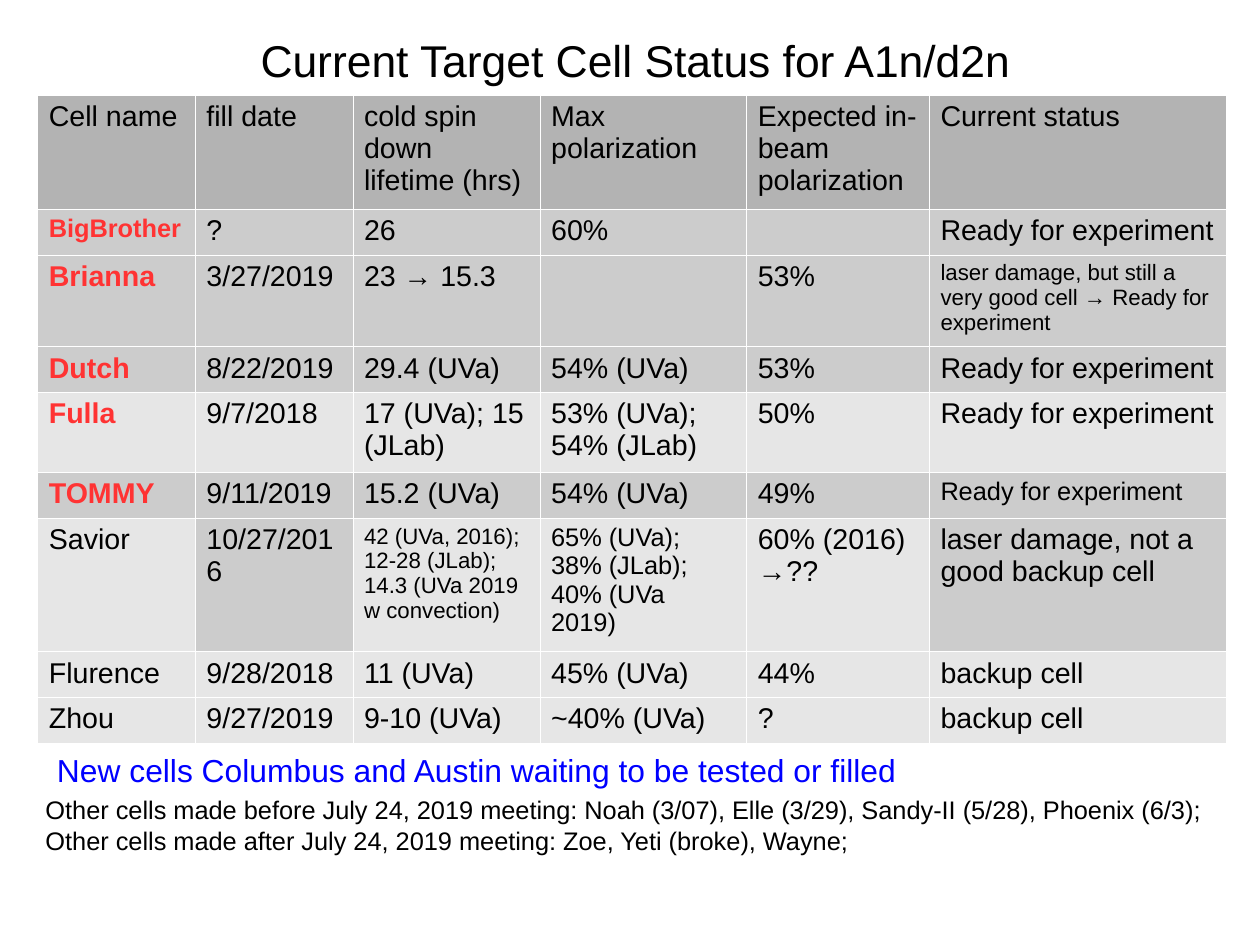
from typing import NamedTuple

from lxml import etree
from pptx import Presentation
from pptx.dml.color import RGBColor
from pptx.enum.text import MSO_ANCHOR, PP_ALIGN
from pptx.oxml.ns import qn
from pptx.util import Cm, Emu, Pt

LEFT, CENTER = PP_ALIGN.LEFT, PP_ALIGN.CENTER
TOP, MIDDLE = MSO_ANCHOR.TOP, MSO_ANCHOR.MIDDLE
WIDTH, HEIGHT = Cm(28), Cm(21)
FONT = "Arial"
BLACK, RED, BLUE, WHITE = "000000", "FF3333", "0000FF", "FFFFFF"
HEAD, DARK, LIGHT = "B3B3B3", "CCCCCC", "E6E6E6"
READY = "Ready for experiment"
COLS = (12.51, 12.51, 14.85, 16.4, 14.5, 23.58)
LINE = 4.59
FRAME = 50.2


class Cell(NamedTuple):
    text: str
    size: int = 18
    fill: str = ""


class Row(NamedTuple):
    high: float
    fill: str
    name: Cell
    data: tuple[Cell | str, ...]
    ready: bool = False


class Note(NamedTuple):
    left: float
    top: float
    wide: float
    high: float
    lines: tuple[str, ...]
    size: int
    color: str = BLACK
    align: PP_ALIGN = LEFT
    anchor: MSO_ANCHOR = TOP
    inset: bool = True


ROWS = (
    Row(11.37, HEAD, Cell("Cell name"),
        ("fill date", "cold spin down lifetime (hrs)", "Max polarization",
         "Expected in-beam polarization", "Current status")),
    Row(LINE, DARK, Cell("BigBrother", 16), ("?", "26", "60%", "", READY), True),
    Row(9.19, DARK, Cell("Brianna"),
        ("3/27/2019", "23 → 15.3", "", "53%",
         Cell("laser damage, but still a very good cell → Ready for experiment", 14)), True),
    Row(LINE, DARK, Cell("Dutch"),
        ("8/22/2019", "29.4 (UVa)", "54% (UVa)", "53%", READY), True),
    Row(7.98, LIGHT, Cell("Fulla"),
        ("9/7/2018", "17 (UVa); 15 (JLab)", "53% (UVa); 54% (JLab)", "50%", READY), True),
    Row(LINE, DARK, Cell("TOMMY"),
        ("9/11/2019", "15.2 (UVa)", "54% (UVa)", "49%", Cell(READY, 16)), True),
    Row(13.18, LIGHT, Cell("Savior"),
        (Cell("10/27/2016", fill=DARK),
         Cell("42 (UVa, 2016); 12-28 (JLab); 14.3 (UVa 2019 w convection)", 14),
         Cell("65% (UVa); 38% (JLab); 40% (UVa 2019)", 16),
         "60% (2016) →??",
         Cell("laser damage, not a good backup cell", fill=DARK))),
    Row(LINE, LIGHT, Cell("Flurence"),
        ("9/28/2018", "11 (UVa)", "45% (UVa)", "44%", "backup cell")),
    Row(LINE, LIGHT, Cell("Zhou"),
        ("9/27/2019", "9-10 (UVa)", "~40% (UVa)", "?", "backup cell")),
)

NOTES = (
    Note(2.81, 2.42, 95.19, 7.86, ("Current Target Cell Status for A1n/d2n",),
         28, align=CENTER, anchor=MIDDLE, inset=False),
    Note(2.72, 83.4, 95.55, 8.46,
         ("Other cells made before July 24, 2019 meeting: Noah (3/07), Elle (3/29), "
          "Sandy-II (5/28), Phoenix (6/3);",
          "Other cells made after July 24, 2019 meeting: Zoe, Yeti (broke), Wayne;"), 16),
    Note(3.63, 78.8, 87.11, 8.71,
         ("New cells Columbus and Austin waiting to be tested or filled",), 20, BLUE),
)


def across(share: float) -> Emu:
    return Emu(round(WIDTH * share / 100))


def down(share: float) -> Emu:
    return Emu(round(HEIGHT * share / 100))


def paint(color: str) -> RGBColor:
    return RGBColor.from_string(color)


def style(para, size: int, color: str, bold: bool = False) -> None:
    font = para.font
    font.name, font.size, font.bold = FONT, Pt(size), bold
    font.color.rgb = paint(color)


def edge(cell) -> None:
    props = cell._tc.get_or_add_tcPr()
    for spot, side in enumerate(("a:lnL", "a:lnR", "a:lnT", "a:lnB")):
        line = etree.Element(qn(side), w=str(Pt(0.06)))
        fill = etree.SubElement(line, qn("a:solidFill"))
        etree.SubElement(fill, qn("a:srgbClr"), val=WHITE)
        props.insert(spot, line)


def draw_cell(cell, item: Cell, fill: str, hot: bool) -> None:
    cell.fill.solid()
    cell.fill.fore_color.rgb = paint(item.fill or fill)
    edge(cell)
    para = cell.text_frame.paragraphs[0]
    if item.text:
        para.text = item.text
        style(para, item.size, RED if hot else BLACK, hot)
    else:
        tail = etree.SubElement(para._p, qn("a:endParaRPr"), sz=str(item.size * 100))
        etree.SubElement(tail, qn("a:latin"), typeface=FONT)


def draw_table(slide) -> None:
    shape = slide.shapes.add_table(
        len(ROWS), len(COLS), across(2.97), down(10.04), across(sum(COLS)), down(FRAME))
    table = shape.table
    table.first_row = table.horz_banding = False
    for col, wide in zip(table.columns, COLS):
        col.width = across(wide)
    for r, row in enumerate(ROWS):
        table.rows[r].height = down(row.high)
        for c, item in enumerate((row.name, *row.data)):
            entry = Cell(item) if isinstance(item, str) else item
            draw_cell(table.cell(r, c), entry, row.fill, row.ready and c == 0)
    shape.height = down(FRAME)


def draw_note(slide, note: Note) -> None:
    frame = slide.shapes.add_textbox(
        across(note.left), down(note.top), across(note.wide), down(note.high)).text_frame
    frame.word_wrap = True
    frame.vertical_anchor = note.anchor
    if not note.inset:
        frame.margin_left = frame.margin_right = 0
        frame.margin_top = frame.margin_bottom = 0
    frame.text = "\n".join(note.lines)
    for spot, para in enumerate(frame.paragraphs):
        para.alignment = note.align
        if spot:
            para.space_before = Pt(0.5)
        style(para, note.size, note.color)


def main() -> None:
    deck = Presentation()
    deck.slide_width, deck.slide_height = WIDTH, HEIGHT
    slide = deck.slides.add_slide(deck.slide_layouts[6])
    title, *rest = NOTES
    draw_note(slide, title)
    draw_table(slide)
    for note in rest:
        draw_note(slide, note)
    deck.save("out.pptx")


if __name__ == "__main__":
    main()
